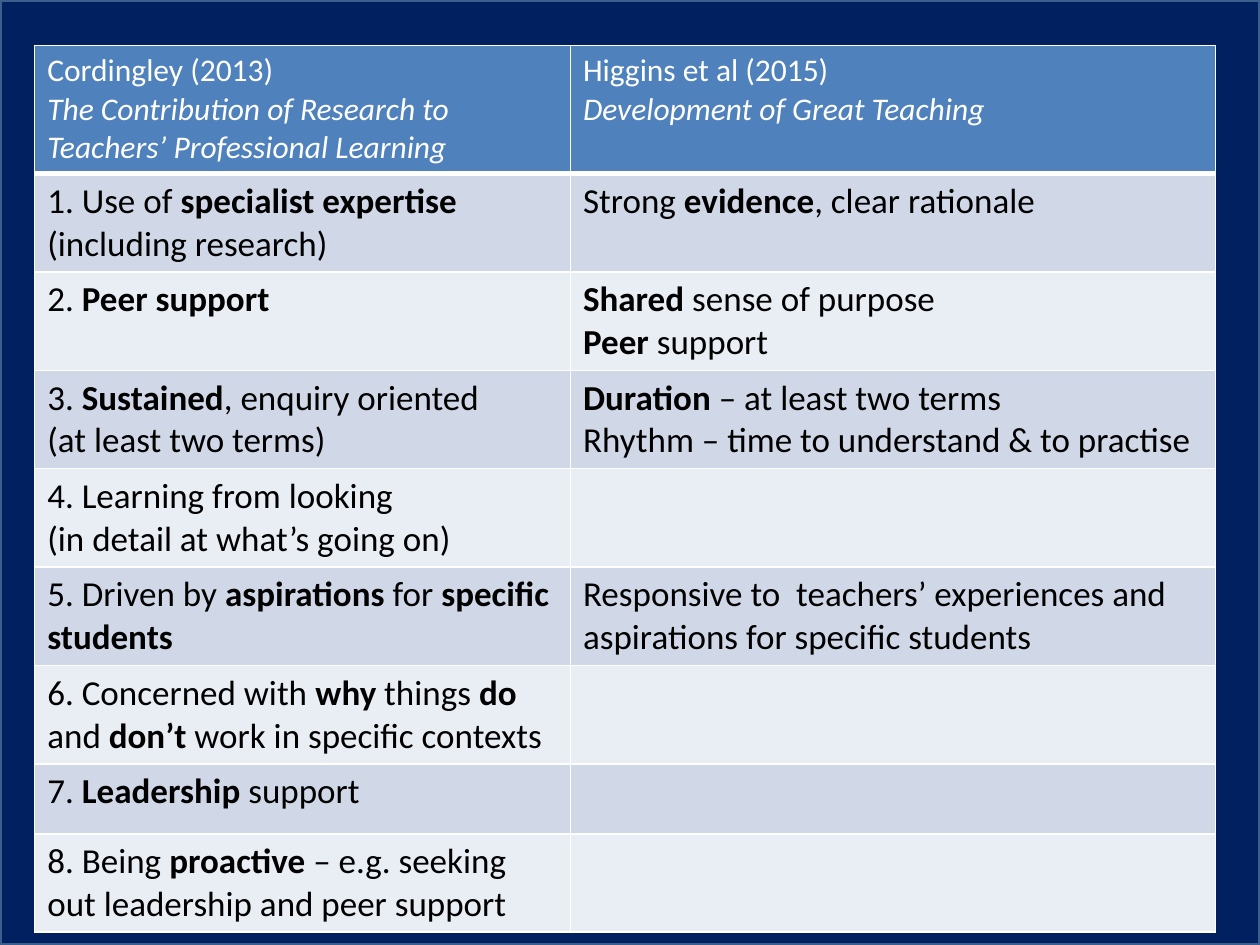
import pptx
import pptx.dml.color
import pptx.enum.shapes
import pptx.oxml.ns
import pptx.util
from lxml import etree
from pptx.util import Cm

NAVY, EDGE, WHITE, BLACK = "002060", "3A5F8C", "FFFFFF", "000000"
HEADER_FILL = "4F81BD"
BAND_FILLS = ["D0D8E8", "E9EDF4"]

HEADINGS = [
    ("Cordingley (2013)", "The Contribution of Research to Teachers’ Professional Learning"),
    ("Higgins et al (2015)", "Development of Great Teaching"),
]
FINDINGS = [
    ("1. Use of **specialist expertise **(including research)",
     "Strong **evidence**, clear rationale"),
    ("2. **Peer support**",
     "**Shared** sense of purpose\n**Peer** support"),
    ("3. **Sustained**, enquiry oriented \n(at least two terms)",
     "**Duration** – at least two terms\nRhythm – time to understand & to practise"),
    ("4. Learning from looking \n(in detail at what’s going on)", ""),
    ("5. Driven by **aspirations** for **specific students**",
     "Responsive to  teachers’ experiences and aspirations for specific students"),
    ("6. Concerned with **why** things **do** and **don’t** work in specific contexts", ""),
    ("7. **Leadership** support", ""),
    ("8. Being **proactive** – e.g. seeking out leadership and peer support", ""),
]


def rgb(value):
    return pptx.dml.color.RGBColor.from_string(value)


def fill_solid(fill, color):
    fill.solid()
    fill.fore_color.rgb = rgb(color)


def add_backdrop(slide, width, height):
    fill_solid(slide.background.fill, NAVY)
    backdrop = slide.shapes.add_shape(
        pptx.enum.shapes.MSO_SHAPE.RECTANGLE, 0, 0, width, height)
    backdrop.shadow.inherit = False
    fill_solid(backdrop.fill, NAVY)
    backdrop.line.color.rgb = rgb(EDGE)
    backdrop.line.width = pptx.util.Pt(2)


def add_run(paragraph, text, color, **font_format):
    run = paragraph.add_run()
    run.text = text
    run.font.color.rgb = rgb(color)
    for name, value in {"name": "Calibri", "bold": False, **font_format}.items():
        setattr(run.font, name, value)


def set_borders(cell, bottom_points):
    qn = pptx.oxml.ns.qn
    properties = cell._tc.get_or_add_tcPr()
    widths = {"a:lnL": 1, "a:lnR": 1, "a:lnT": 1, "a:lnB": bottom_points}
    for position, (side, points) in enumerate(widths.items()):
        border = etree.Element(qn(side), w=str(pptx.util.Pt(points)))
        fill = etree.SubElement(border, qn("a:solidFill"))
        etree.SubElement(fill, qn("a:srgbClr"), val=WHITE)
        properties.insert(position, border)


def write_heading(cell, study, title):
    fill_solid(cell.fill, HEADER_FILL)
    set_borders(cell, 3)
    size = pptx.util.Pt(18)
    add_run(cell.text_frame.paragraphs[0], study, WHITE, size=size)
    add_run(cell.text_frame.add_paragraph(), title, WHITE, size=size, italic=True)


def write_finding(cell, text, fill):
    fill_solid(cell.fill, fill)
    set_borders(cell, 1)
    paragraph = cell.text_frame.paragraphs[0]
    for index, part in enumerate(text.split("**")):
        for line_number, line in enumerate(part.split("\n")):
            if line_number:
                paragraph.add_line_break()
            if line:
                add_run(paragraph, line, BLACK, size=pptx.util.Pt(20), bold=index % 2 == 1)


def add_comparison(slide):
    column_widths = [Cm(10.8), Cm(13)]
    header_height, row_height = Cm(2.39), Cm(1.41)
    table = slide.shapes.add_table(
        len(FINDINGS) + 1, len(column_widths), Cm(0.7), Cm(0.92),
        sum(column_widths), header_height + row_height * len(FINDINGS)).table
    for column, width in zip(table.columns, column_widths):
        column.width = width
    table.rows[0].height = header_height
    for column, heading in enumerate(HEADINGS):
        write_heading(table.cell(0, column), *heading)
    for row, findings in enumerate(FINDINGS, 1):
        table.rows[row].height = row_height
        for column, text in enumerate(findings):
            write_finding(table.cell(row, column), text, BAND_FILLS[(row - 1) % 2])


def main():
    presentation = pptx.Presentation()
    presentation.slide_width, presentation.slide_height = Cm(25.4), Cm(19.05)
    slide = presentation.slides.add_slide(presentation.slide_layouts[6])
    add_backdrop(slide, presentation.slide_width, presentation.slide_height)
    add_comparison(slide)
    presentation.save("out.pptx")


if __name__ == "__main__":
    main()
